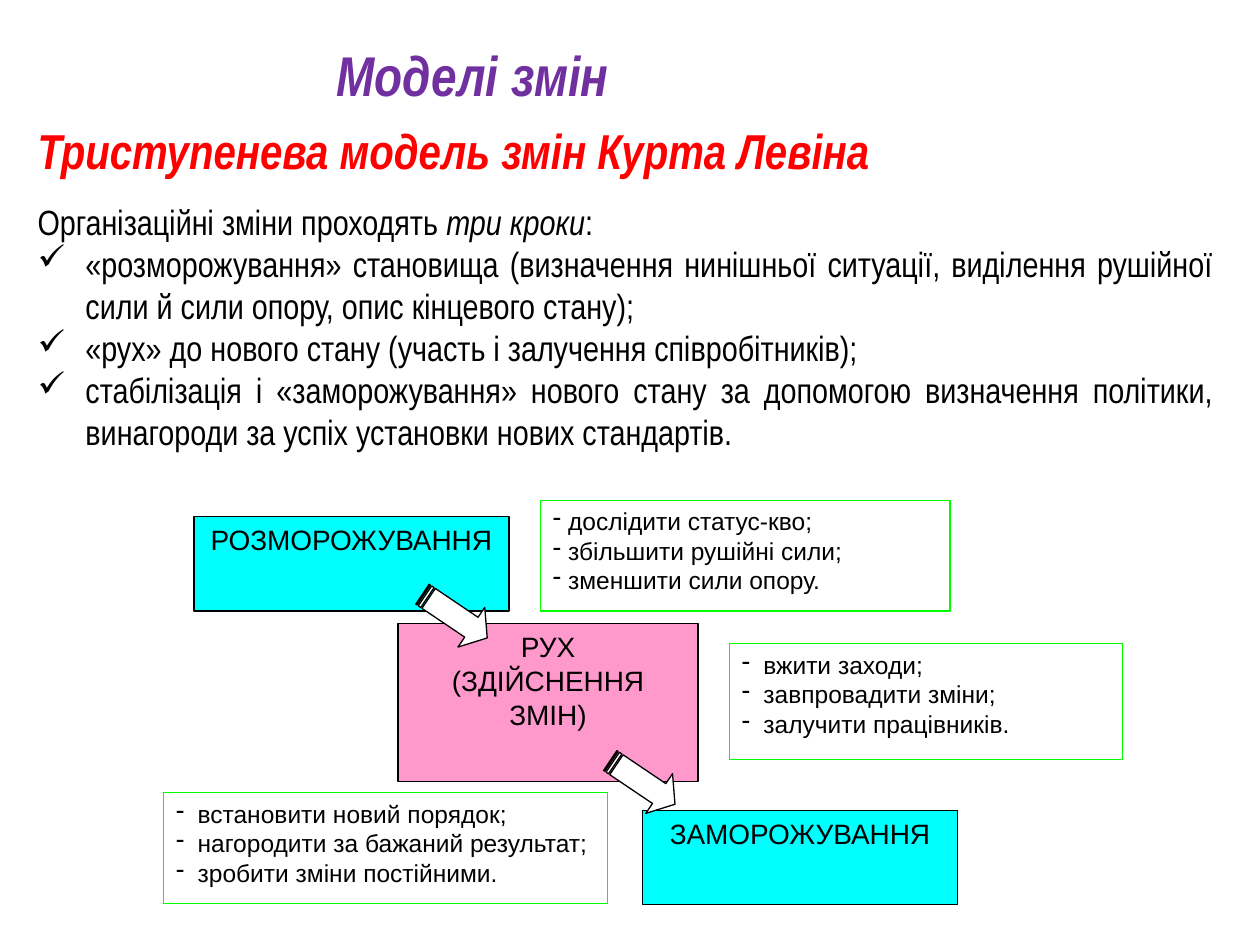
from lxml import etree
from pptx import Presentation
from pptx.dml.color import RGBColor
from pptx.enum import shapes, text
from pptx.oxml.ns import qn
from pptx.util import Inches, Pt

BLACK = RGBColor(0x00, 0x00, 0x00)
WHITE = RGBColor(0xFF, 0xFF, 0xFF)
PURPLE = RGBColor(0x70, 0x30, 0xA0)
RED = RGBColor(0xFF, 0x00, 0x00)
CYAN = RGBColor(0x00, 0xFF, 0xFF)
PINK = RGBColor(0xFF, 0x99, 0xCC)
GREEN = RGBColor(0x00, 0xFF, 0x00)
LEFT, CENTER, JUSTIFY = (text.PP_ALIGN.LEFT, text.PP_ALIGN.CENTER,
                         text.PP_ALIGN.JUSTIFY)


def write(frame, runs, size=16, font="Arial", color=BLACK, bold=False,
          italic=False, align=LEFT, before=0, bullet=None, indent=0):
    """Add a paragraph; runs is a string or a list of (string, italic)."""
    paragraph = frame.paragraphs[0]
    if paragraph.runs:
        paragraph = frame.add_paragraph()
    paragraph.alignment = align
    paragraph.space_before = Pt(before)
    if isinstance(runs, str):
        runs = [(runs, italic)]
    for words, slanted in runs:
        run = paragraph.add_run()
        run.text = words
        run.font.name, run.font.size = font, Pt(size)
        run.font.bold, run.font.italic = bold, slanted
        run.font.color.rgb = color
    if bullet:
        properties = paragraph._p.get_or_add_pPr()
        properties.set("marL", str(Inches(indent)))
        properties.set("indent", str(-Inches(indent)))
        etree.SubElement(properties, qn("a:buChar")).set("char", bullet)


def add_box(kind, position, fill, line):
    shape = slide.shapes.add_shape(kind, *map(Inches, position))
    shape.shadow.inherit = False
    shape.fill.solid()
    shape.fill.fore_color.rgb = fill
    shape.line.color.rgb = line
    shape.line.width = Pt(0.75)
    shape.text_frame.word_wrap = True
    shape.text_frame.vertical_anchor = text.MSO_ANCHOR.TOP
    return shape


presentation = Presentation()
presentation.slide_width, presentation.slide_height = Inches(10), Inches(7.5)
slide = presentation.slides.add_slide(presentation.slide_layouts[5])

# Title
title = slide.shapes.title
title.left, title.top = Inches(2.57), Inches(0.27)
title.width, title.height = Inches(2.6), Inches(0.64)
title.text_frame.auto_size = text.MSO_AUTO_SIZE.NONE
title.text_frame.vertical_anchor = text.MSO_ANCHOR.TOP
write(title.text_frame, "Моделі змін", size=32, font="Arial Narrow",
      color=PURPLE, bold=True, italic=True)

# Explanation
body = slide.shapes.add_textbox(Inches(0.2), Inches(0.91), Inches(9.53),
                                Inches(2.76)).text_frame
body.word_wrap = True
write(body, "Триступенева модель змін Курта Левіна", size=28,
      font="Arial Narrow", color=RED, bold=True, italic=True)
write(body, [("Організаційні зміни проходять ", False), ("три кроки", True),
             (":", False)], size=20, font="Arial Narrow", before=12)
for step in (
    "«розморожування» становища (визначення нинішньої ситуації, "
    "виділення рушійної сили й сили опору, опис кінцевого стану);",
    "«рух» до нового стану (участь і залучення співробітників);",
    "стабілізація і «заморожування» нового стану за допомогою визначення "
    "політики, винагороди за успіх установки нових стандартів.",
):
    write(body, step, size=20, font="Arial Narrow", align=JUSTIFY,
          bullet="✓", indent=0.38)

# Stages of the model
for position, fill, lines in (
    ((3.16, 4.95, 2.38, 1.25), PINK, ["РУХ", "(ЗДІЙСНЕННЯ ЗМІН)"]),
    ((1.54, 4.1, 2.5, 0.75), CYAN, ["РОЗМОРОЖУВАННЯ"]),
    ((5.1, 6.43, 2.5, 0.75), CYAN, ["ЗАМОРОЖУВАННЯ"]),
):
    stage = add_box(shapes.MSO_SHAPE.RECTANGLE, position, fill, BLACK)
    for line in lines:
        write(stage.text_frame, line, align=CENTER)

# Arrows from stage to stage
for left, top in ((3.3, 4.7), (4.79, 6.02)):
    arrow = add_box(shapes.MSO_SHAPE.STRIPED_RIGHT_ARROW,
                    (left, top, 0.62, 0.38), WHITE, BLACK)
    arrow.adjustments[1] = 0.4
    arrow.rotation = 34

# Actions of each stage
for position, indent, actions in (
    ((4.29, 3.97, 3.25, 0.88), 0.12,
     ["дослідити статус-кво;", "збільшити рушійні сили;",
      "зменшити сили опору."]),
    ((5.79, 5.11, 3.12, 0.92), 0.17,
     ["вжити заходи;", "завпровадити зміни;", "залучити працівників."]),
    ((1.3, 6.29, 3.52, 0.88), 0.17,
     ["встановити новий порядок;", "нагородити за бажаний результат;",
      "зробити зміни постійними."]),
):
    note = add_box(shapes.MSO_SHAPE.RECTANGLE, position, WHITE, GREEN)
    for action in actions:
        write(note.text_frame, action, size=14, bullet="-", indent=indent)

presentation.save("out.pptx")
